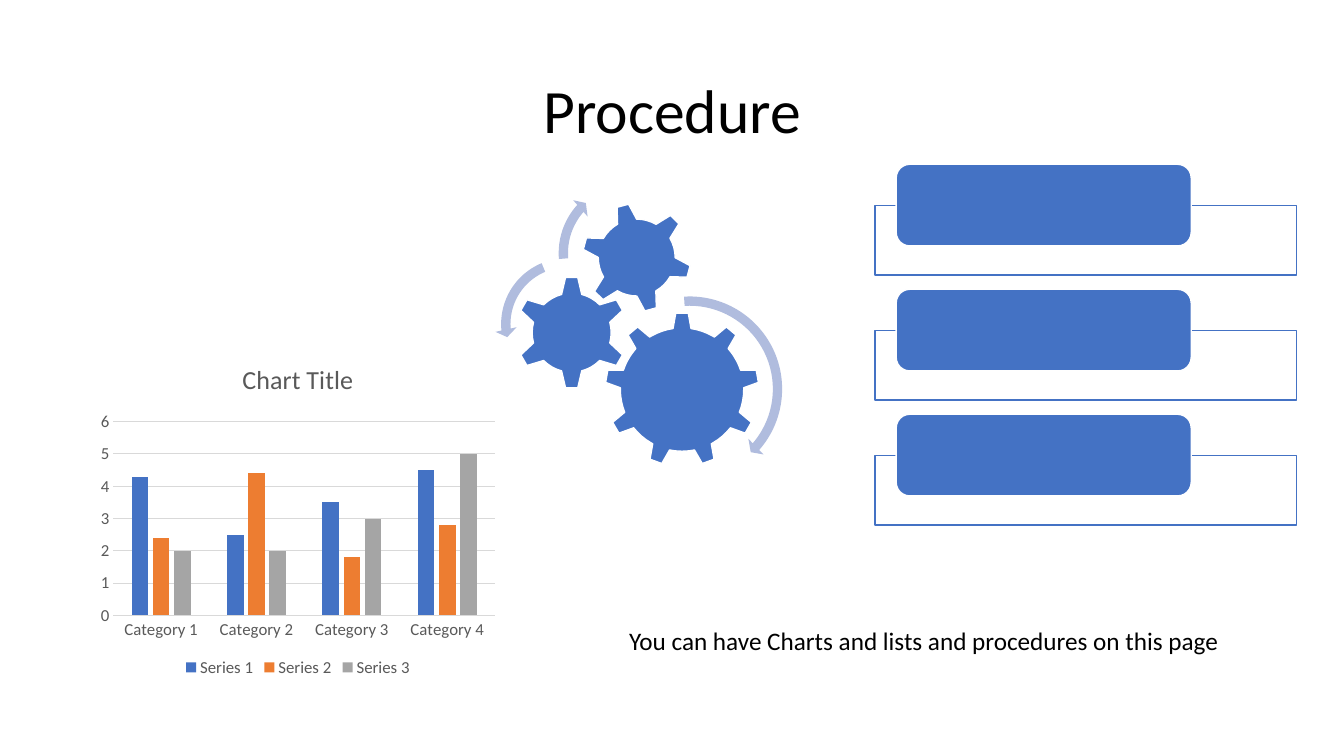
from lxml.etree import SubElement
from pptx import Presentation
from pptx.chart.data import CategoryChartData
from pptx.dml.color import RGBColor
from pptx.enum.chart import XL_CHART_TYPE, XL_LEGEND_POSITION, XL_TICK_MARK
from pptx.enum.shapes import MSO_SHAPE
from pptx.enum.text import MSO_ANCHOR, PP_ALIGN
from pptx.oxml.ns import qn
from pptx.util import Inches, Pt

BLUE, WHITE, BLACK = "4472C4", "FFFFFF", "000000"
ARROW, GREY, RULE = "B0BCDE", "595959", "D9D9D9"
CATEGORIES = [f"Category {n}" for n in range(1, 5)]
SERIES = [
    ("Series 1", (4.3, 2.5, 3.5, 4.5), BLUE),
    ("Series 2", (2.4, 4.4, 1.8, 2.8), "ED7D31"),
    ("Series 3", (2, 2, 3, 5), "A5A5A5"),
]
GEARS = [
    (MSO_SHAPE.GEAR_9_, 109, 136, 153, 0) if hasattr(MSO_SHAPE, "GEAR_9_")
    else (MSO_SHAPE.GEAR_9, 109, 136, 153, 0),
    (MSO_SHAPE.GEAR_6, 20, 100, 112, 0),
    (MSO_SHAPE.GEAR_6, 86, 27, 109, 345),
]
ARROWS = [
    (MSO_SHAPE.CIRCULAR_ARROW, 95, 114, 196, 4.7, (4.98, 40.96, 266.58), 5.5),
    (MSO_SHAPE.LEFT_CIRCULAR_ARROW, 0, 76, 143, 6.5, (7.17, 174.82, 247.3), 7.5),
    (MSO_SHAPE.CIRCULAR_ARROW, 57, 0, 154, 6, (6.57, 221.9, 175.14), 7),
]


def color(value):
    return RGBColor.from_string(value)


def apply(target, values):
    for name, value in values.items():
        setattr(target, name, value)


def set_font(font, size, fill):
    apply(font, {"name": "Calibri", "size": Pt(size), "bold": False})
    font.color.rgb = color(fill)


def add_shape(s, kind, box, fill, line=None):
    sp = s.shapes.add_shape(kind, *map(Inches, box))
    sp.shadow.inherit = False
    sp.fill.solid()
    sp.fill.fore_color.rgb = color(fill)
    if line:
        sp.line.color.rgb = color(line)
        sp.line.width = Pt(1)
    else:
        sp.line.fill.background()
    return sp


def add_text(s, box, text, size, frame, paragraph):
    tf = s.shapes.add_textbox(*map(Inches, box)).text_frame
    apply(tf, frame)
    p = tf.paragraphs[0]
    apply(p, paragraph)
    r = p.add_run()
    r.text = text
    set_font(r.font, size, BLACK)


def add_bar_chart(s, box):
    data = CategoryChartData()
    data.categories = CATEGORIES
    for name, values, _ in SERIES:
        data.add_series(name, values)
    chart = s.shapes.add_chart(
        XL_CHART_TYPE.COLUMN_CLUSTERED, *map(Inches, box), data).chart
    set_font(chart.font, 12, GREY)
    apply(chart, {"has_title": True, "has_legend": True})
    chart.chart_title.include_in_layout = False
    p = chart.chart_title.text_frame.paragraphs[0]
    r = p.add_run()
    r.text = "Chart Title"
    set_font(r.font, 18.6, GREY)
    apply(chart.legend, {"position": XL_LEGEND_POSITION.BOTTOM,
                         "include_in_layout": False})
    plot = chart.plots[0]
    apply(plot, {"gap_width": 219, "overlap": -27, "vary_by_categories": False})
    for series, (_, _, fill) in zip(plot.series, SERIES):
        series.format.fill.solid()
        series.format.fill.fore_color.rgb = color(fill)
    for axis in (chart.category_axis, chart.value_axis):
        apply(axis, {"major_tick_mark": XL_TICK_MARK.NONE,
                     "minor_tick_mark": XL_TICK_MARK.NONE})
    apply(chart.value_axis, {"minimum_scale": 0, "maximum_scale": 6,
                             "major_unit": 1, "has_major_gridlines": True})
    chart.value_axis.format.line.fill.background()
    for rule in (chart.category_axis, chart.value_axis.major_gridlines):
        rule.format.line.color.rgb = color(RULE)
        rule.format.line.width = Pt(0.75)


def add_list(s, box, rows=3):
    x, y, w, h = box
    unit = h / 358
    for row in range(rows):
        top = y + row * 124 * unit
        frame = add_shape(s, MSO_SHAPE.RECTANGLE,
                          (x, top + 41 * unit, w, 69 * unit), WHITE, BLUE)
        tint = frame.fill._xPr.find(qn("a:solidFill"))[0]
        SubElement(tint, qn("a:alpha"), val="90000")
        add_shape(s, MSO_SHAPE.ROUNDED_RECTANGLE,
                  (x + w * 0.05, top, w * 0.7, 81 * unit), BLUE, WHITE)


def add_gears(s, box):
    x, y, w, _ = box
    unit = w / 291

    def square(col, row, side):
        return x + col * unit, y + row * unit, side * unit, side * unit

    for kind, col, row, side, turn in GEARS:
        add_shape(s, kind, square(col, row, side), BLUE, WHITE).rotation = turn
    for kind, col, row, side, band, angles, head in ARROWS:
        sp = add_shape(s, kind, square(col, row, side), ARROW)
        values = [band / 100, *(angle * 0.6 for angle in angles), head / 100]
        for i, value in enumerate(values):
            sp.adjustments[i] = value


def main():
    prs = Presentation()
    apply(prs, {"slide_width": Inches(13.33), "slide_height": Inches(7.5)})
    s = prs.slides.add_slide(prs.slide_layouts[6])
    add_text(s, (0.92, 0.4, 11.5, 1.45), "Procedure", 44,
             {"word_wrap": True, "vertical_anchor": MSO_ANCHOR.MIDDLE},
             {"alignment": PP_ALIGN.CENTER, "line_spacing": 0.9})
    add_bar_chart(s, (0.92, 3.42, 4.07, 3.34))
    add_list(s, (8.68, 1.63, 4.18, 3.58))
    add_gears(s, (4.91, 1.74, 2.91, 3.1))
    add_text(s, (6.14, 6.15, 6.12, 0.4),
             "You can have Charts and lists and procedures on this page", 18,
             {"word_wrap": False}, {"alignment": PP_ALIGN.LEFT})
    prs.save("out.pptx")


if __name__ == "__main__":
    main()
